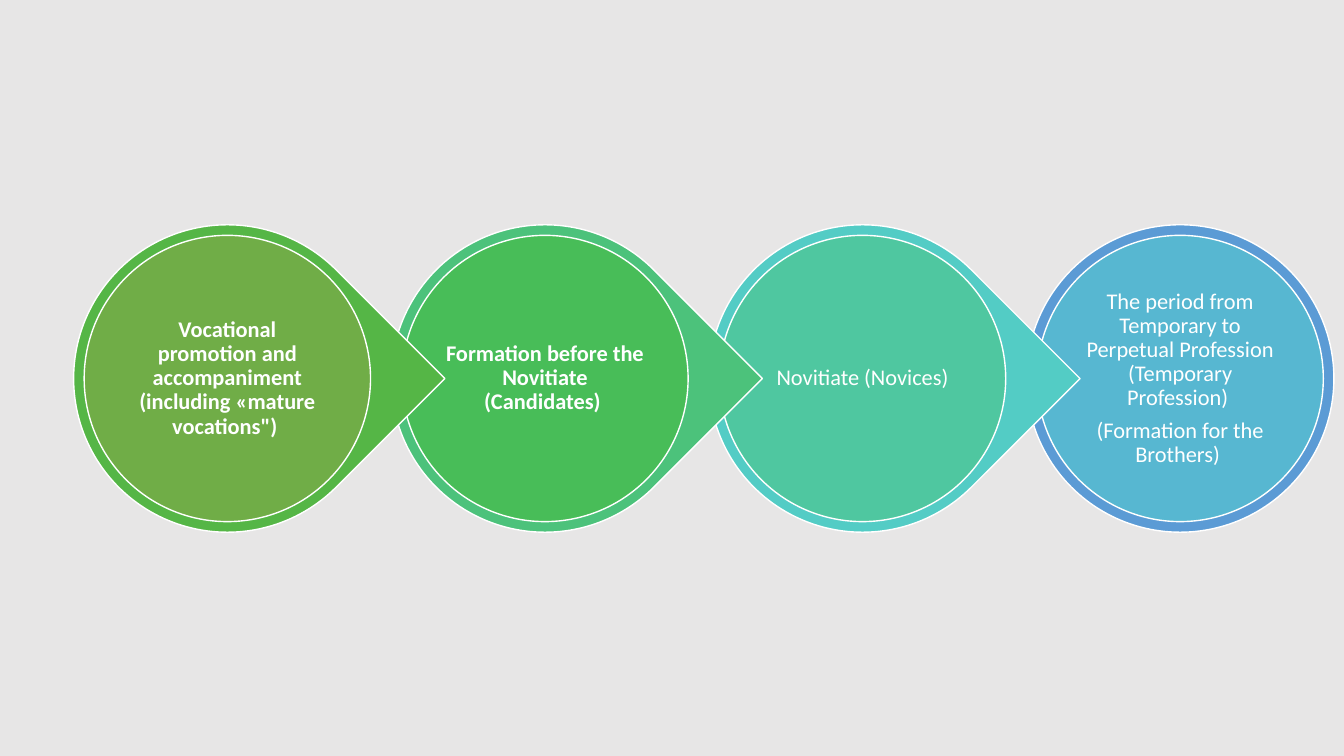
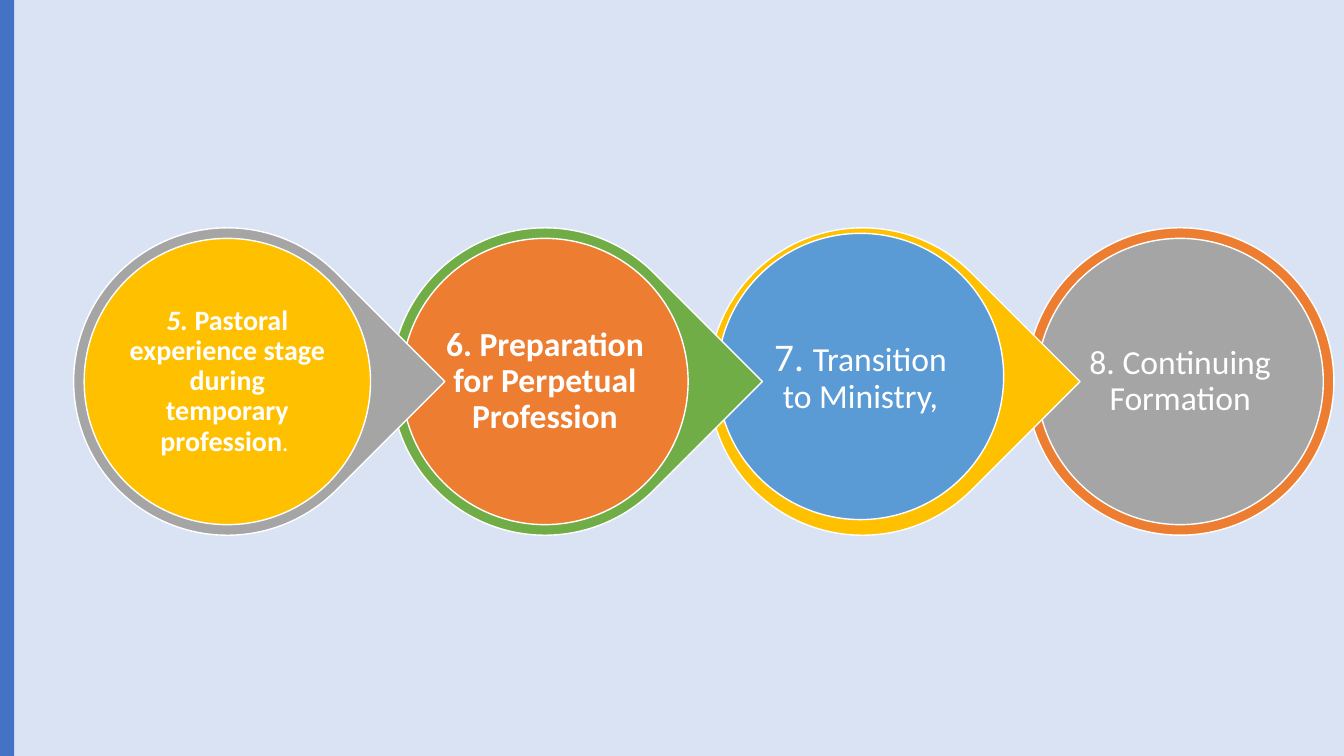
import pptx
import pptx.dml.color
import pptx.enum.shapes
import pptx.enum.text
import pptx.util

RGBColor = pptx.dml.color.RGBColor
Inches = pptx.util.Inches
Pt = pptx.util.Pt
Shape = pptx.enum.shapes.MSO_SHAPE

WHITE = RGBColor(0xFF, 0xFF, 0xFF)
LIGHT_GRAY = RGBColor(0xE7, 0xE6, 0xE6)
PALE_BLUE = RGBColor(0xDA, 0xE3, 0xF3)
ROYAL_BLUE = RGBColor(0x44, 0x72, 0xC4)
BLUE = RGBColor(0x5B, 0x9B, 0xD5)
SKY = RGBColor(0x57, 0xB7, 0xD1)
TURQUOISE = RGBColor(0x53, 0xCC, 0xC5)
SEA_GREEN = RGBColor(0x4F, 0xC7, 0xA0)
JADE = RGBColor(0x4C, 0xC2, 0x7B)
EMERALD = RGBColor(0x48, 0xBD, 0x58)
LEAF = RGBColor(0x55, 0xB6, 0x46)
GREEN = RGBColor(0x70, 0xAD, 0x47)
ORANGE = RGBColor(0xED, 0x7D, 0x31)
GOLD = RGBColor(0xFF, 0xC0, 0x00)
GRAY = RGBColor(0xA5, 0xA5, 0xA5)

SLIDE_WIDTH, SLIDE_HEIGHT = 13.33, 7.5
CHAIN_LEFT, STAGE_PITCH = 0.73, 3.15
RING_SIZE, DISC_SIZE, LABEL_SIZE = 3.05, 2.84, 2.03
DISC_OFFSET = (RING_SIZE - DISC_SIZE) / 2
LABEL_OFFSET = (DISC_SIZE - LABEL_SIZE) / 2


class StageDeck:
    """Draw chains of formation stages in one shared style."""

    font_name = "Calibri"

    def __init__(self):
        self.deck = pptx.Presentation()
        self.deck.slide_width = Inches(SLIDE_WIDTH)
        self.deck.slide_height = Inches(SLIDE_HEIGHT)
        self.page = None

    def add_page(self, background):
        self.page = self.deck.slides.add_slide(self.deck.slide_layouts[6])
        fill = self.page.background.fill
        fill.solid()
        fill.fore_color.rgb = background

    def add_figure(self, kind, left, top, width, height, color, outlined=True):
        figure = self.page.shapes.add_shape(
            kind, Inches(left), Inches(top), Inches(width), Inches(height))
        figure.shadow.inherit = False
        figure.fill.solid()
        figure.fill.fore_color.rgb = color
        if outlined:
            figure.line.color.rgb = WHITE
            figure.line.width = Pt(1)
        else:
            figure.line.fill.background()
        return figure

    def add_label(self, left, top, paragraphs, inset):
        box = self.page.shapes.add_textbox(
            Inches(left), Inches(top), Inches(LABEL_SIZE), Inches(LABEL_SIZE))
        frame = box.text_frame
        frame.word_wrap = True
        frame.vertical_anchor = pptx.enum.text.MSO_ANCHOR.MIDDLE
        frame.margin_left = frame.margin_right = Inches(inset)
        frame.margin_top = frame.margin_bottom = Inches(inset)
        for index, runs in enumerate(paragraphs):
            para = frame.add_paragraph() if index else frame.paragraphs[0]
            para.alignment = pptx.enum.text.PP_ALIGN.CENTER
            para.line_spacing = 0.9
            para.space_after = Pt(0.35 * runs[0][1])
            for text, size, bold, italic in runs:
                span = para.add_run()
                span.text = text
                span.font.name = self.font_name
                span.font.size = Pt(size)
                span.font.bold = bold
                span.font.italic = italic
                span.font.color.rgb = WHITE

    def add_chain(self, top, stages, inset):
        last = len(stages) - 1
        for index in range(last, -1, -1):
            ring_color, disc_color, paragraphs, (shift_x, shift_y) = stages[index]
            left = CHAIN_LEFT + index * STAGE_PITCH
            kind = Shape.OVAL if index == last else Shape.TEAR
            ring = self.add_figure(kind, left, top, RING_SIZE, RING_SIZE, ring_color)
            if index < last:
                ring.rotation = 45
            disc_left = left + DISC_OFFSET + shift_x
            disc_top = top + DISC_OFFSET + shift_y
            self.add_figure(Shape.OVAL, disc_left, disc_top, DISC_SIZE, DISC_SIZE, disc_color)
            self.add_label(disc_left + LABEL_OFFSET, disc_top + LABEL_OFFSET, paragraphs, inset)


def run(text, size, bold=False, italic=False):
    return text, size, bold, italic


CENTERED = (0, 0)
RAISED = (-0.02, -0.05)

EARLY_STAGES = [
    (LEAF, GREEN, [[run("Vocational promotion and accompaniment (including «mature vocations\") ", 16, True)]],
     CENTERED),
    (JADE, EMERALD, [[run("Formation before the Novitiate (Candidates) ", 16, True)]], CENTERED),
    (TURQUOISE, SEA_GREEN, [[run("Novitiate (Novices)", 16)]], CENTERED),
    (BLUE, SKY, [
        [run("The period from Temporary to Perpetual Profession (Temporary Profession) ", 16)],
        [run("(Formation for the Brothers) ", 16)],
    ], CENTERED),
]

LATER_STAGES = [
    (GRAY, GOLD, [[
        run("5. ", 20, True, True),
        run("Pastoral experience stage during temporary profession", 20, True),
        run(". ", 18),
    ]], CENTERED),
    (GREEN, ORANGE, [[run("6. Preparation for Perpetual Profession", 24, True)]], CENTERED),
    (GOLD, BLUE, [[run("7. ", 28), run("Transition to Ministry,", 24)]], RAISED),
    (ORANGE, GRAY, [[run("8. Continuing Formation", 24)]], CENTERED),
]


def main():
    show = StageDeck()
    show.add_page(LIGHT_GRAY)
    show.add_chain(2.23, EARLY_STAGES, 0.02)
    show.add_page(PALE_BLUE)
    show.add_figure(Shape.RECTANGLE, 0, 0, 0.14, SLIDE_HEIGHT, ROYAL_BLUE, outlined=False)
    show.add_chain(2.26, LATER_STAGES, 0.03)
    show.deck.save("out.pptx")


if __name__ == "__main__":
    main()
